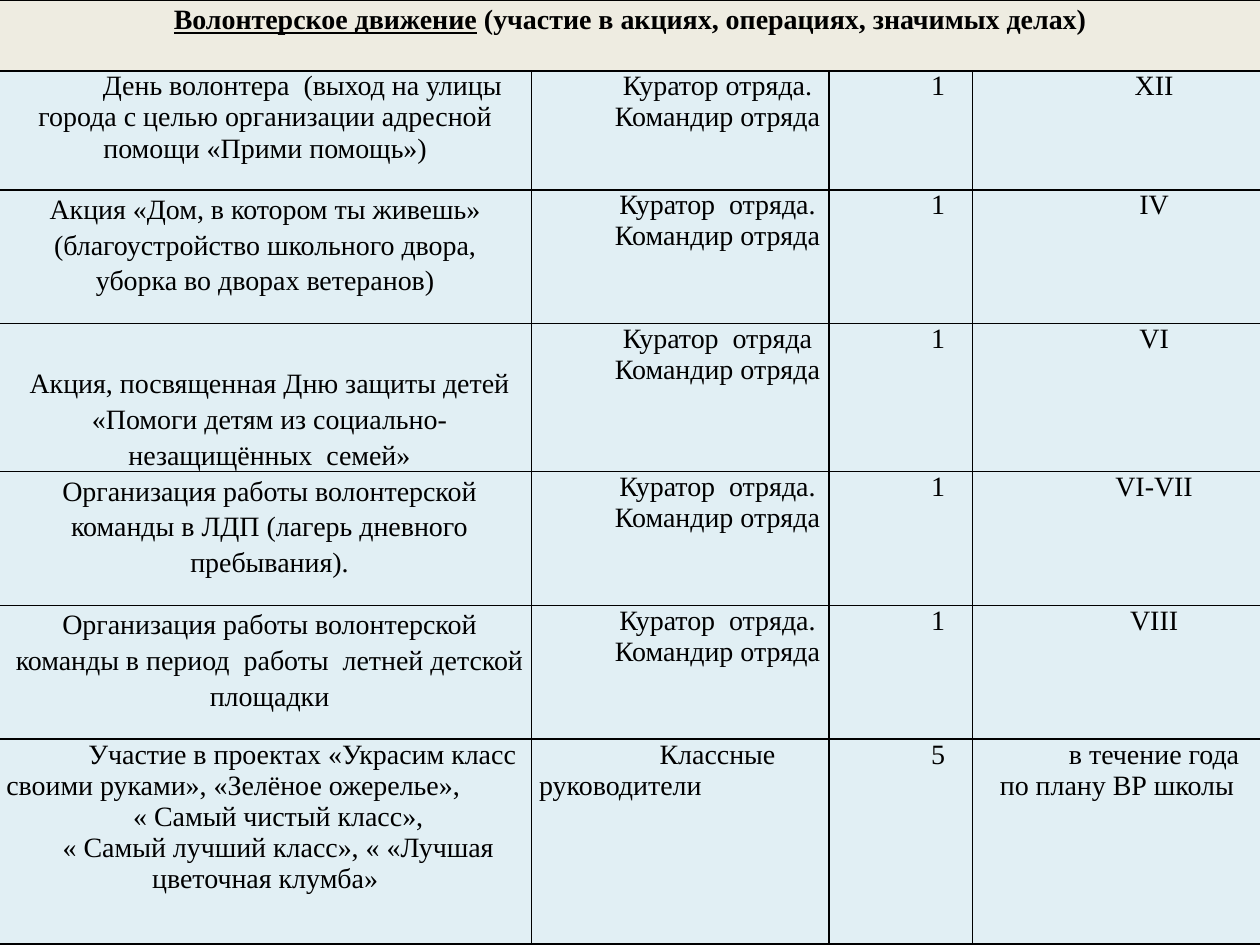
from dataclasses import dataclass

from lxml import etree
from pptx import Presentation
from pptx.dml.color import RGBColor
from pptx.enum.text import MSO_ANCHOR, PP_ALIGN
from pptx.oxml.ns import qn
from pptx.table import Table, _Cell
from pptx.util import Pt

LEFT, MID = PP_ALIGN.LEFT, PP_ALIGN.CENTER
TOP, BASE = MSO_ANCHOR.TOP, MSO_ANCHOR.BOTTOM
BLACK = RGBColor(0x00, 0x00, 0x00)
CREAM = RGBColor(0xEE, 0xEC, 0xE1)
PALE = RGBColor(0xE1, 0xEF, 0xF4)
FONT, SIZE = "Times New Roman", 16
COLS = (304.5, 170, 82, 165)
ROWS = (40.5, 68, 76.5, 84.5, 76.5, 76.5, 117)


@dataclass(frozen=True)
class Style:
    first: float = 0
    margin: float = 0
    space: float = 1
    align: PP_ALIGN = MID


@dataclass(frozen=True)
class Run:
    text: str
    bold: bool = False
    under: bool = False


@dataclass(frozen=True)
class Para:
    runs: tuple[Run, ...]
    style: Style


@dataclass(frozen=True)
class Event:
    deed: tuple[Para, ...]
    lead: tuple[Para, ...]
    count: str
    month: str
    anchor: MSO_ANCHOR = TOP


INDENT = Style(first=42.5)
LOOSE = Style(space=1.15)
INSET = Style(margin=5, space=1.15)
FLUSH = Style(align=LEFT)
SHIFT = Style(margin=15)
PLAIN = Style()


def para(text: str, style: Style = INDENT) -> Para:
    return Para((Run(text),), style)


def paras(style: Style, *texts: str) -> tuple[Para, ...]:
    return tuple(para(text, style) for text in texts)


TITLE = Para((
    Run("Волонтерское движение", bold=True, under=True),
    Run(" (участие в акциях, операциях, значимых делах)", bold=True),
), LOOSE)
CHIEF = "Командир отряда"
LEADS = paras(INDENT, "Куратор  отряда.", CHIEF)

EVENTS = (
    Event(
        paras(INDENT, "День волонтера  (выход на улицы города с целью "
                      "организации адресной помощи «Прими помощь»)"),
        paras(INDENT, "Куратор отряда.", CHIEF), "1", "XII"),
    Event(
        paras(LOOSE, "Акция «Дом, в котором ты живешь»",
              "(благоустройство школьного двора,",
              "уборка во дворах ветеранов)"),
        LEADS, "1", "IV"),
    Event(
        paras(INSET, "Акция, посвященная Дню защиты детей «Помоги детям "
                     "из социально-незащищённых  семей»"),
        paras(INDENT, "Куратор  отряда", CHIEF), "1", "VI", BASE),
    Event(
        paras(INSET, "Организация работы волонтерской",
              "команды в ЛДП (лагерь дневного пребывания)."),
        LEADS, "1", "VI-VII"),
    Event(
        paras(INSET, "Организация работы волонтерской",
              "команды в период  работы  летней детской площадки"),
        LEADS, "1", "VIII"),
    Event(
        (para("Участие в проектах «Украсим класс"),
         para("своими руками», «Зелёное ожерелье»,", FLUSH),
         *paras(SHIFT, "« Самый чистый класс»,",
                "« Самый лучший класс», « «Лучшая"),
         para("цветочная клумба»", PLAIN)),
        (para("Классные"), para("руководители", FLUSH)),
        "5", "в течение года по плану ВР школы"),
)


def edge(cell: _Cell) -> None:
    """Draw a thin black border on all four sides."""
    props = cell._tc.get_or_add_tcPr()
    for i, side in enumerate(("a:lnL", "a:lnR", "a:lnT", "a:lnB")):
        line = etree.Element(qn(side), w=str(Pt(1)))
        fill = etree.SubElement(line, qn("a:solidFill"))
        etree.SubElement(fill, qn("a:srgbClr"), val=str(BLACK))
        props.insert(i, line)


def paint(cell: _Cell, color: RGBColor) -> None:
    cell.fill.solid()
    cell.fill.fore_color.rgb = color
    edge(cell)


def write(cell: _Cell, items: tuple[Para, ...], anchor: MSO_ANCHOR = TOP) -> None:
    cell.margin_left = cell.margin_right = Pt(4.32)
    cell.margin_top = cell.margin_bottom = Pt(0)
    cell.vertical_anchor = anchor
    frame = cell.text_frame
    for i, item in enumerate(items):
        block = frame.add_paragraph() if i else frame.paragraphs[0]
        style = item.style
        block.alignment = style.align
        block.line_spacing = style.space
        props = block._p.get_or_add_pPr()
        props.set("marL", str(Pt(style.margin)))
        props.set("indent", str(Pt(style.first)))
        for part in item.runs:
            run = block.add_run()
            run.text = part.text
            font = run.font
            font.name, font.size = FONT, Pt(SIZE)
            font.bold, font.underline = part.bold, part.under
            font.color.rgb = BLACK


def fill_row(table: Table, row: int, event: Event) -> None:
    write(table.cell(row, 0), event.deed, event.anchor)
    write(table.cell(row, 1), event.lead)
    write(table.cell(row, 2), (para(event.count),))
    write(table.cell(row, 3), (para(event.month),))


def main() -> None:
    deck = Presentation()
    deck.slide_width, deck.slide_height = Pt(720), Pt(540)
    slide = deck.slides.add_slide(deck.slide_layouts[6])
    back = slide.background.fill
    back.solid()
    back.fore_color.rgb = BLACK

    table = slide.shapes.add_table(
        len(ROWS), len(COLS), Pt(-0.72), Pt(0), Pt(sum(COLS)), Pt(sum(ROWS))
    ).table
    for col, width in zip(table.columns, COLS):
        col.width = Pt(width)
    for i, (row, height) in enumerate(zip(table.rows, ROWS)):
        row.height = Pt(height)
        for cell in row.cells:
            paint(cell, PALE if i else CREAM)

    head = table.cell(0, 0)
    head.merge(table.cell(0, len(COLS) - 1))
    write(head, (TITLE,))
    for i, event in enumerate(EVENTS, 1):
        fill_row(table, i, event)
    deck.save("out.pptx")


if __name__ == "__main__":
    main()
